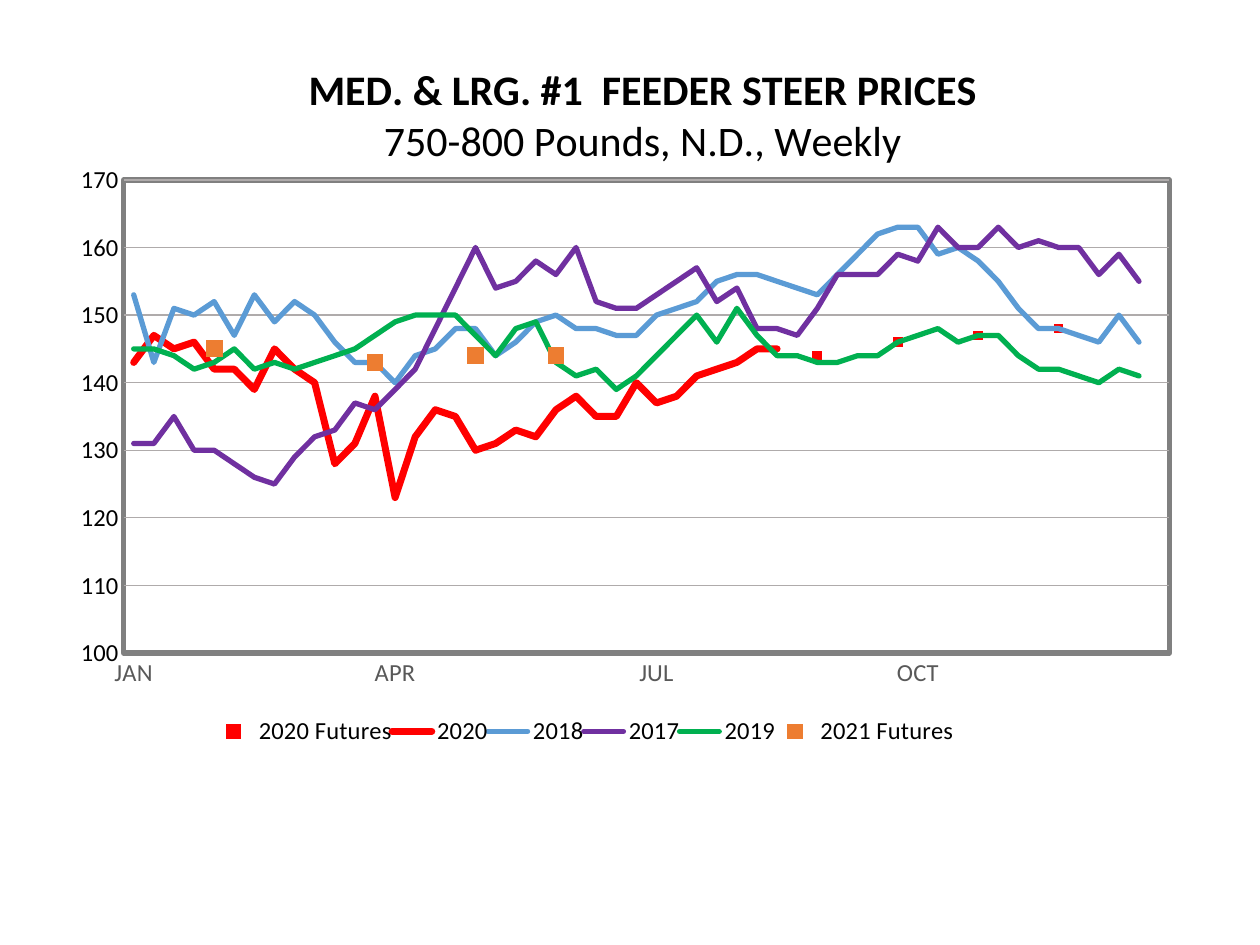
from pptx import Presentation
from pptx.chart.data import CategoryChartData
from pptx.dml.color import RGBColor
from pptx.enum.chart import (XL_CHART_TYPE, XL_LEGEND_POSITION, XL_MARKER_STYLE,
                             XL_TICK_MARK)
from pptx.oxml import parse_xml
from pptx.oxml.ns import nsdecls, qn
from pptx.util import Inches, Pt

LINE_MARKERS = XL_CHART_TYPE.LINE_MARKERS
BOTTOM = XL_LEGEND_POSITION.BOTTOM
SQUARE, NO_MARKER = XL_MARKER_STYLE.SQUARE, XL_MARKER_STYLE.NONE
NO_TICK = XL_TICK_MARK.NONE

THEME = {
    "font": "Calibri",
    "title_size": Pt(24), "label_size": Pt(14),
    "text": RGBColor.from_string("000000"),
    "months": RGBColor.from_string("595959"),
    "grid": RGBColor.from_string("AFABAB"),
    "frame": RGBColor.from_string("808080"),
    "red": RGBColor.from_string("FF0000"),
    "blue": RGBColor.from_string("5B9BD5"),
    "purple": RGBColor.from_string("7030A0"),
    "green": RGBColor.from_string("00B050"),
    "orange": RGBColor.from_string("ED7D31"),
}

WEEKS = 52
MONTHS = {0: "JAN", 13: "APR", 26: "JUL", 39: "OCT"}

# Futures are keyed by week; yearly prices run from the first week on.
FUTURES = {
    "2020 Futures": {34: 144, 38: 146, 42: 147, 46: 148},
    "2021 Futures": {4: 145, 12: 143, 17: 144, 21: 144},
}
PRICES = {
    "2020": [143, 147, 145, 146, 142, 142, 139, 145, 142, 140, 128, 131, 138,
             123, 132, 136, 135, 130, 131, 133, 132, 136, 138, 135, 135, 140,
             137, 138, 141, 142, 143, 145, 145],
    "2018": [153, 143, 151, 150, 152, 147, 153, 149, 152, 150, 146, 143, 143,
             140, 144, 145, 148, 148, 144, 146, 149, 150, 148, 148, 147, 147,
             150, 151, 152, 155, 156, 156, 155, 154, 153, 156, 159, 162, 163,
             163, 159, 160, 158, 155, 151, 148, 148, 147, 146, 150, 146],
    "2017": [131, 131, 135, 130, 130, 128, 126, 125, 129, 132, 133, 137, 136,
             139, 142, 148, 154, 160, 154, 155, 158, 156, 160, 152, 151, 151,
             153, 155, 157, 152, 154, 148, 148, 147, 151, 156, 156, 156, 159,
             158, 163, 160, 160, 163, 160, 161, 160, 160, 156, 159, 155],
    "2019": [145, 145, 144, 142, 143, 145, 142, 143, 142, 143, 144, 145, 147,
             149, 150, 150, 150, 147, 144, 148, 149, 143, 141, 142, 139, 141,
             144, 147, 150, 146, 151, 147, 144, 144, 143, 143, 144, 144, 146,
             147, 148, 146, 147, 147, 144, 142, 142, 141, 140, 142, 141],
}
# Name: colour, line width or marker size in points
STYLES = {
    "2020 Futures": ("red", 5),
    "2020": ("red", 4),
    "2018": ("blue", 3),
    "2017": ("purple", 3),
    "2019": ("green", 3),
    "2021 Futures": ("orange", 9),
}


def set_layout(parent, index, **fractions):
    """Fix a chart part at fractions of the chart's width and height."""
    for old in parent.findall(qn("c:layout")):
        parent.remove(old)
    modes = "".join(f'<c:{axis}Mode val="edge"/>' for axis in "xy")
    target = '<c:layoutTarget val="inner"/>' if index == 0 else ""
    sizes = "".join(f'<c:{key} val="{value}"/>' for key, value in fractions.items())
    parent.insert(index, parse_xml(
        f'<c:layout {nsdecls("c")}><c:manualLayout>{target}{modes}{sizes}'
        "</c:manualLayout></c:layout>"))


def set_font(font, **values):
    font.name = THEME["font"]
    font.color.rgb = values.pop("color", THEME["text"])
    for name, value in values.items():
        setattr(font, name, value)


deck = Presentation()
deck.slide_width, deck.slide_height = Inches(10), Inches(7.5)
page = deck.slides.add_slide(deck.slide_layouts[6])

# Chart data
data = CategoryChartData(number_format="General")
data.categories = [MONTHS.get(week, "") for week in range(WEEKS)]
for name in STYLES:
    by_week = FUTURES.get(name) or dict(enumerate(PRICES[name]))
    data.add_series(name, [by_week.get(week) for week in range(WEEKS)])
chart = page.shapes.add_chart(LINE_MARKERS, Inches(0.43), Inches(0.35),
                              Inches(9.04), Inches(6.27), data).chart
set_font(chart.font, size=Pt(10))

# Title
title_frame = chart.chart_title.text_frame
title_lines = [("MED. & LRG. #1  FEEDER STEER PRICES", True),
               ("750-800 Pounds, N.D., Weekly", False)]
for number, (text, bold) in enumerate(title_lines):
    para = title_frame.add_paragraph() if number else title_frame.paragraphs[0]
    span = para.add_run()
    span.text = text
    set_font(span.font, size=THEME["title_size"], bold=bold)

# Legend
chart.has_legend = True
chart.legend.position = BOTTOM
chart.legend.include_in_layout = False
set_font(chart.legend.font, size=THEME["label_size"])

# Axes
months, prices = chart.category_axis, chart.value_axis
for axis, color in ((months, THEME["months"]), (prices, THEME["text"])):
    axis.major_tick_mark = axis.minor_tick_mark = NO_TICK
    set_font(axis.tick_labels.font, size=THEME["label_size"], color=color)
for name, value in {"minimum_scale": 100, "maximum_scale": 170,
                    "major_unit": 10, "has_major_gridlines": True}.items():
    setattr(prices, name, value)
prices.format.line.fill.background()
for line, color in ((months.format.line, "frame"),
                    (prices.major_gridlines.format.line, "grid")):
    line.color.rgb = THEME[color]
    line.width = Pt(0.75)

# Series: futures are loose squares, years are plain lines
plot = chart.plots[0]
plot.vary_by_categories = False
for series in plot.series:
    color, size = STYLES[series.name]
    series.smooth = False
    if series.name in FUTURES:
        series.format.line.fill.background()
        series.marker.style = SQUARE
        series.marker.size = size
        series.marker.format.fill.solid()
        series.marker.format.fill.fore_color.rgb = THEME[color]
        series.marker.format.line.fill.background()
    else:
        series.marker.style = NO_MARKER
        series.format.line.color.rgb = THEME[color]
        series.format.line.width = Pt(size)
for outline in chart.element.xpath(".//c:ser/c:spPr/a:ln[a:solidFill]"):
    outline.set("cap", "rnd")

# Plot frame and places of the chart parts
plot_area = chart.element.xpath("c:chart/c:plotArea")[0]
plot_area.append(parse_xml(
    f'<c:spPr {nsdecls("c", "a")}><a:noFill/><a:ln w="{Pt(3)}"><a:solidFill>'
    f'<a:srgbClr val="{THEME["frame"]}"/></a:solidFill></a:ln></c:spPr>'))
set_layout(plot_area, 0, x=0.061, y=0.172, w=0.918, h=0.599)
set_layout(chart.element.xpath("c:chart/c:title")[0], 1, x=0.22, y=0.02)
set_layout(chart.element.xpath("c:chart/c:legend")[0], 1, x=0.14, y=0.84, w=0.65, h=0.06)

deck.save("out.pptx")
